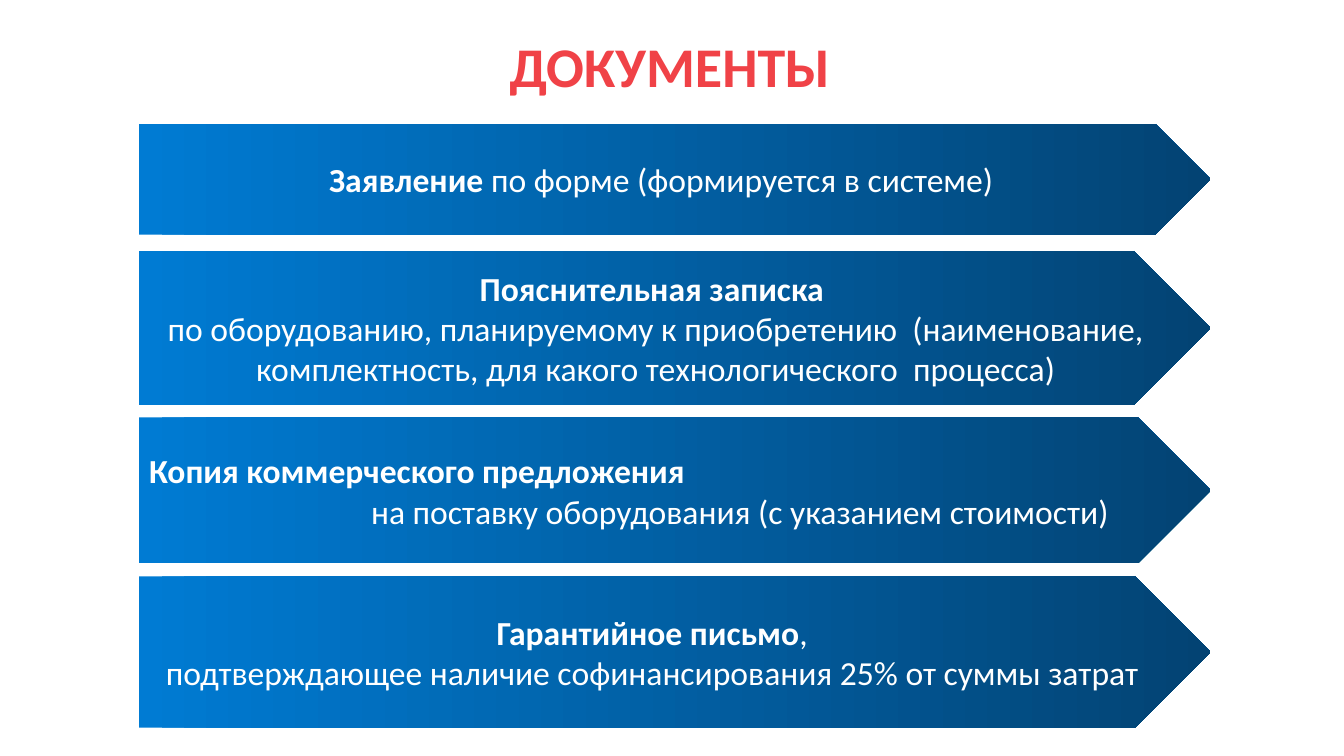
from dataclasses import dataclass

from pptx import Presentation
from pptx.dml.color import RGBColor
from pptx.enum.shapes import MSO_SHAPE
from pptx.enum.text import MSO_ANCHOR, PP_ALIGN
from pptx.util import Pt

FONT = "Calibri"
RED, WHITE = "F04247", "FFFFFF"
GRADIENT = ("007BD3", "034373")
ARROW_LEFT, ARROW_WIDTH = 99.4, 765.4


@dataclass
class Line:
    bold: str = ""
    plain: str = ""
    align: PP_ALIGN = PP_ALIGN.CENTER
    indent: float = 0


@dataclass
class Document:
    top: float
    height: float
    lines: list[Line]


DOCUMENTS = [
    Document(88.5, 79.2, [Line("Заявление", " по форме (формируется в системе)")]),
    Document(179.3, 110.2, [
        Line("Пояснительная записка "),
        Line(plain="по оборудованию, планируемому к приобретению  (наименование, "
                   "комплектность, для какого технологического  процесса)"),
    ]),
    Document(298.1, 104.4, [
        Line("Копия коммерческого предложения", align=PP_ALIGN.LEFT),
        Line(plain="на поставку оборудования (с указанием стоимости)",
             align=PP_ALIGN.LEFT, indent=158.6),
    ]),
    Document(411.8, 108, [
        Line("Гарантийное письмо", ", "),
        Line(plain="подтверждающее наличие софинансирования 25% от суммы затрат "),
    ]),
]


def color(value: str) -> RGBColor:
    return RGBColor.from_string(value)


def format_run(run, size: float, fill: str, bold: bool) -> None:
    run.font.name = FONT
    run.font.size = Pt(size)
    run.font.bold = bold
    run.font.color.rgb = color(fill)


def add_title(slide, text: str) -> None:
    box = slide.shapes.add_textbox(Pt(-1.5), Pt(-3), Pt(960), Pt(103))
    frame = box.text_frame
    frame.word_wrap = True
    frame.vertical_anchor = MSO_ANCHOR.MIDDLE
    frame.text = text
    paragraph = frame.paragraphs[0]
    paragraph.alignment = PP_ALIGN.CENTER
    paragraph.line_spacing = 0.96
    format_run(paragraph.runs[0], 40, RED, True)


def write_line(paragraph, line: Line) -> None:
    paragraph.alignment = line.align
    if line.indent:
        paragraph._p.get_or_add_pPr().set("marL", str(Pt(line.indent)))
    for text, bold in ((line.bold, True), (line.plain, False)):
        if text:
            run = paragraph.add_run()
            run.text = text
            format_run(run, 24, WHITE, bold)


def add_document(slide, document: Document) -> None:
    arrow = slide.shapes.add_shape(
        MSO_SHAPE.PENTAGON, Pt(ARROW_LEFT), Pt(document.top),
        Pt(ARROW_WIDTH), Pt(document.height))
    arrow.shadow.inherit = False
    arrow.line.fill.background()
    arrow.fill.gradient()
    arrow.fill.gradient_angle = 0
    for stop, value in zip(arrow.fill.gradient_stops, GRADIENT):
        stop.color.rgb = color(value)
    frame = arrow.text_frame
    frame.word_wrap = True
    frame.vertical_anchor = MSO_ANCHOR.MIDDLE
    for index, line in enumerate(document.lines):
        paragraph = frame.add_paragraph() if index else frame.paragraphs[0]
        write_line(paragraph, line)


def main() -> None:
    presentation = Presentation()
    presentation.slide_width, presentation.slide_height = Pt(960), Pt(540)
    slide = presentation.slides.add_slide(presentation.slide_layouts[6])
    add_title(slide, "ДОКУМЕНТЫ")
    for document in DOCUMENTS:
        add_document(slide, document)
    presentation.save("out.pptx")


if __name__ == "__main__":
    main()
